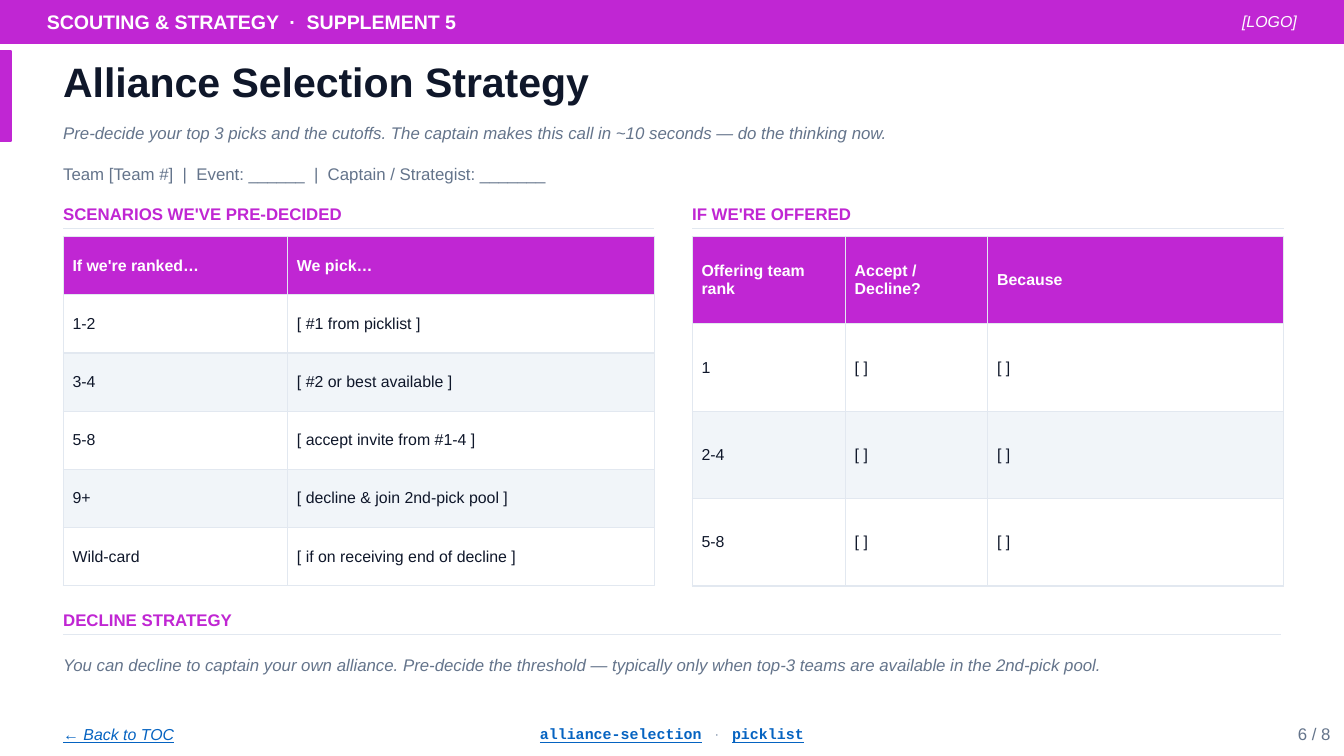
"""Build the alliance selection strategy worksheet slide."""
import pptx
import pptx.dml.color
import pptx.enum.shapes
import pptx.enum.text
import pptx.oxml
import pptx.oxml.ns
import pptx.util

RGBColor = pptx.dml.color.RGBColor
Align = pptx.enum.text.PP_ALIGN
ACCENT = RGBColor(0xC0, 0x26, 0xD3)
INK = RGBColor(0x0F, 0x17, 0x2A)
MUTED = RGBColor(0x64, 0x74, 0x8B)
FAINT = RGBColor(0x94, 0xA3, 0xB8)
RULE = RGBColor(0xE2, 0xE8, 0xF0)
BAND = RGBColor(0xF1, 0xF5, 0xF9)
LINK = RGBColor(0x05, 0x63, 0xC1)
WHITE = RGBColor(0xFF, 0xFF, 0xFF)
GRID_COLUMNS, GRID_ROWS = 100, 56.25
MARGIN, FULL, HALF = 4.7, 90.6, 44
LINE_HEIGHT = 2.2


def write(paragraph, text, font="Arial", size=9, color=MUTED, bold=False,
          italic=False, underline=False):
    """Add one formatted run to a paragraph."""
    run = paragraph.add_run()
    run.text = text
    run.font.name = font
    run.font.size = pptx.util.Pt(size)
    run.font.color.rgb = color
    run.font.bold = bold
    run.font.italic = italic
    run.font.underline = underline


class Worksheet:
    """Hold the style and slide, and draw elements in grid columns and rows."""

    def __init__(self, deck):
        """Start a title-only slide on the deck."""
        self.slide = deck.slides.add_slide(deck.slide_layouts[5])
        self.shapes = self.slide.shapes
        self.column = deck.slide_width / GRID_COLUMNS
        self.row = deck.slide_height / GRID_ROWS

    def box(self, left, top, width, height):
        """Convert a grid area to slide lengths."""
        return (round(left * self.column), round(top * self.row),
                round(width * self.column), round(height * self.row))

    def frame(self, holder, align):
        """Clear the margins of a text holder and return its paragraph."""
        frame = holder.text_frame
        frame.word_wrap = True
        frame.auto_size = pptx.enum.text.MSO_AUTO_SIZE.NONE
        frame.vertical_anchor = pptx.enum.text.MSO_ANCHOR.MIDDLE
        frame.margin_left = frame.margin_right = 0
        frame.margin_top = frame.margin_bottom = 0
        frame.paragraphs[0].alignment = align
        return frame.paragraphs[0]

    def title(self, area, text):
        """Place and format the title placeholder."""
        heading = self.shapes.title
        heading.left, heading.top, heading.width, heading.height = self.box(*area)
        write(self.frame(heading, Align.LEFT), text, size=22, color=INK, bold=True)

    def text(self, area, *pieces, align=Align.LEFT, **style):
        """Add a text box holding one line of runs."""
        paragraph = self.frame(self.shapes.add_textbox(*self.box(*area)), align)
        for piece in pieces:
            text, special = piece if isinstance(piece, tuple) else (piece, {})
            write(paragraph, text, **{**style, **special})

    def bar(self, *area):
        """Add a solid accent rectangle."""
        bar = self.shapes.add_shape(
            pptx.enum.shapes.MSO_SHAPE.RECTANGLE, *self.box(*area))
        bar.shadow.inherit = False
        bar.fill.solid()
        bar.fill.fore_color.rgb = ACCENT
        bar.line.color.rgb = ACCENT
        bar.line.width = pptx.util.Pt(1)

    def section(self, left, top, width, text):
        """Add a section heading underlined by a thin rule."""
        self.text((left, top, width, LINE_HEIGHT), text, color=ACCENT, bold=True)
        x, y, length, _ = self.box(left, top + LINE_HEIGHT, width, 0)
        rule = self.shapes.add_connector(
            pptx.enum.shapes.MSO_CONNECTOR.STRAIGHT, x, y, x + length, y)
        rule.line.color.rgb = RULE
        rule.line.width = pptx.util.Pt(0.75)
        rule._element.spPr.append(pptx.oxml.parse_xml(
            f'<a:effectLst {pptx.oxml.ns.nsdecls("a")}/>'))

    def borders(self, cell):
        """Give a cell thin rules on all four sides."""
        properties = cell._tc.get_or_add_tcPr()
        for side in ("lnL", "lnR", "lnT", "lnB"):
            properties.append(pptx.oxml.parse_xml(
                f'<a:{side} {pptx.oxml.ns.nsdecls("a")} w="9525"><a:solidFill>'
                f'<a:srgbClr val="{RULE}"/></a:solidFill></a:{side}>'))

    def table(self, left, top, height, widths, rows):
        """Add a banded table with an accent header."""
        area = self.box(left, top, sum(widths), height)
        table = self.shapes.add_table(len(rows), len(widths), *area).table
        table.horz_banding = False
        for column, width in zip(table.columns, widths):
            column.width = round(width * self.column)
        for index, values in enumerate(rows):
            header = index == 0
            table.rows[index].height = round(height / len(rows) * self.row)
            for cell, value in zip(table.rows[index].cells, values):
                self.borders(cell)
                cell.fill.solid()
                cell.fill.fore_color.rgb = (
                    ACCENT if header else WHITE if index % 2 else BAND)
                cell.vertical_anchor = pptx.enum.text.MSO_ANCHOR.MIDDLE
                cell.margin_left = cell.margin_right = pptx.util.Inches(0.07)
                cell.margin_top = cell.margin_bottom = pptx.util.Inches(
                    0.03 if header else 0.04)
                write(cell.text_frame.paragraphs[0], value, size=8.5,
                      color=WHITE if header else INK, bold=header)


def main():
    """Build and save the slide."""
    deck = pptx.Presentation()
    deck.slide_width = pptx.util.Inches(10)
    deck.slide_height = pptx.util.Inches(5.625)
    sheet = Worksheet(deck)

    sheet.bar(0, 0, GRID_COLUMNS, 3.2)
    sheet.text((3.5, 0, 82, 3.2), "SCOUTING & STRATEGY  ·  SUPPLEMENT 5",
               size=10.5, color=WHITE, bold=True)
    sheet.text((87.5, 0, 9, 3.2), "[LOGO]", align=Align.RIGHT,
               size=8.5, color=WHITE, italic=True)
    sheet.bar(0, 3.8, 0.8, 6.7)
    sheet.title((MARGIN, 3.8, 91.3, 4.5), "Alliance Selection Strategy")
    sheet.text((MARGIN, 8.8, 91.3, LINE_HEIGHT),
               "Pre-decide your top 3 picks and the cutoffs. The captain makes "
               "this call in ~10 seconds — do the thinking now.", italic=True)
    sheet.text((MARGIN, 11.8, FULL, LINE_HEIGHT),
               "Team [Team #]  |  Event: ______  |  Captain / Strategist: _______")

    scenarios = [
        ("If we're ranked…", "We pick…"),
        ("1-2", "[ #1 from picklist ]"),
        ("3-4", "[ #2 or best available ]"),
        ("5-8", "[ accept invite from #1-4 ]"),
        ("9+", "[ decline & join 2nd-pick pool ]"),
        ("Wild-card", "[ if on receiving end of decline ]"),
    ]
    offers = [("Offering team rank", "Accept / Decline?", "Because")]
    offers += [(rank, "[ ]", "[ ]") for rank in ("1", "2-4", "5-8")]
    for left, heading, widths, rows in (
            (MARGIN, "SCENARIOS WE'VE PRE-DECIDED", (16.7, 27.3), scenarios),
            (51.5, "IF WE'RE OFFERED", (11.4, 10.6, 22), offers)):
        sheet.section(left, 14.8, HALF, heading)
        sheet.table(left, 17.6, 26, widths, rows)

    sheet.section(MARGIN, 45, FULL, "DECLINE STRATEGY")
    sheet.text((MARGIN, 47.5, FULL, 4),
               "You can decline to captain your own alliance. Pre-decide the "
               "threshold — typically only when top-3 teams are available in "
               "the 2nd-pick pool.", italic=True)

    sheet.text((MARGIN, 53.2, 16, 2.8), "← Back to TOC",
               size=8.5, color=LINK, italic=True, underline=True)
    topic = dict(font="Courier New", color=LINK, bold=True, underline=True)
    sheet.text((22, 53.2, 56, 2.8), ("alliance-selection", topic), "   ·   ",
               ("picklist", topic), align=Align.CENTER, size=8, color=FAINT)
    sheet.text((91, 53.2, 8, 2.8), "6 / 8", align=Align.RIGHT)
    deck.save("out.pptx")


if __name__ == "__main__":
    main()
